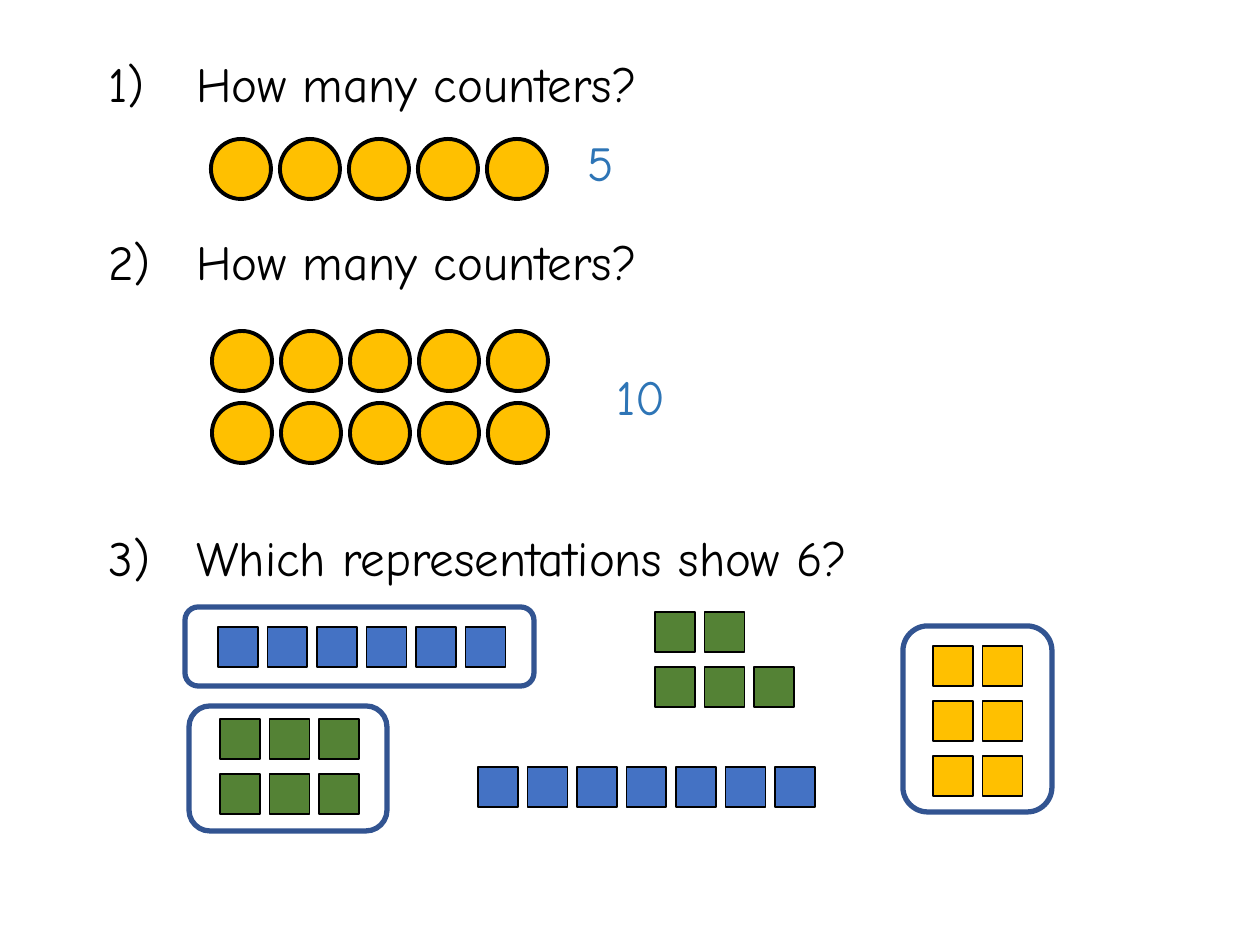
"""Build a counting worksheet slide with counters, squares and ringed answers."""
from pptx import Presentation
from pptx.dml.color import RGBColor
from pptx.enum.shapes import MSO_SHAPE as Shape
from pptx.util import Emu, Pt

SCALE = 914400 / 126
FONT = "Comic Neue"
COLOURS = {"black": "000000", "amber": "FFC000", "blue": "4472C4",
           "green": "548235", "answer": "2E75B6", "ring": "325491"}

QUESTIONS = [("1)", "How many counters?", 0),
             ("2)", "How many counters?", 68),
             ("3)", "Which representations show 6?", 136)]
QUESTION_AREA = (96, 47, 1033, 726)
QUESTION_INDENT = 88
ANSWERS = [("5", (575, 126, 145, 72)), ("10", (604, 360, 145, 72))]

COUNTER = {"kind": Shape.OVAL, "size": 60, "step": (69, 72), "weight": 2.25}
SQUARE = {"kind": Shape.RECTANGLE, "size": 40, "step": (49.5, 55), "weight": 1}
GROUPS = [(COUNTER, "amber", (211, 139), [5]),
          (COUNTER, "amber", (212, 331), [5, 5]),
          (SQUARE, "blue", (218, 627), [6]),
          (SQUARE, "green", (220, 719), [3, 3]),
          (SQUARE, "amber", (933, 646), [2, 2, 2]),
          (SQUARE, "blue", (478, 767), [7]),
          (SQUARE, "green", (655, 612), [2, 3])]
RINGS = [(185, 607, 349, 79), (189, 706, 198, 125), (903, 626, 149, 186)]


def px(length):
    return Emu(round(length * SCALE))


def rgb(name):
    return RGBColor.from_string(COLOURS[name])


def add_outline(page, kind, area, fill, line, weight):
    shape = page.shapes.add_shape(kind, *map(px, area))
    shape.shadow.inherit = False
    if fill:
        shape.fill.solid()
        shape.fill.fore_color.rgb = rgb(fill)
    else:
        shape.fill.background()
    shape.line.color.rgb = rgb(line)
    shape.line.width = Pt(weight)


def add_group(page, item, fill, origin, rows):
    size = item["size"]
    for row, count in enumerate(rows):
        for column in range(count):
            left, top = (start + index * step for start, index, step
                         in zip(origin, (column, row), item["step"]))
            add_outline(page, item["kind"], (left, top, size, size),
                        fill, "black", item["weight"])


def add_box(page, area):
    box = page.shapes.add_textbox(*map(px, area))
    box.text_frame.word_wrap = True
    return box.text_frame


def add_span(para, text, colour):
    span = para.add_run()
    span.text = text
    span.font.name = FONT
    span.font.size = Pt(28)
    span.font.color.rgb = rgb(colour)


def add_questions(page):
    frame = add_box(page, QUESTION_AREA)
    for index, (number, question, space) in enumerate(QUESTIONS):
        para = frame.add_paragraph() if index else frame.paragraphs[0]
        properties = para._p.get_or_add_pPr()
        properties.set("marL", str(px(QUESTION_INDENT)))
        properties.set("indent", str(-px(QUESTION_INDENT)))
        para.space_before = Pt(space)
        add_span(para, f"{number}\t{question}", "black")


def main():
    deck = Presentation()
    deck.slide_width, deck.slide_height = px(1260), px(945)
    page = deck.slides.add_slide(deck.slide_layouts[6])
    add_questions(page)
    for group in GROUPS:
        add_group(page, *group)
    for answer, area in ANSWERS:
        add_span(add_box(page, area).paragraphs[0], answer, "answer")
    for area in RINGS:
        add_outline(page, Shape.ROUNDED_RECTANGLE, area, None, "ring", 3)
    deck.save("out.pptx")


if __name__ == "__main__":
    main()
